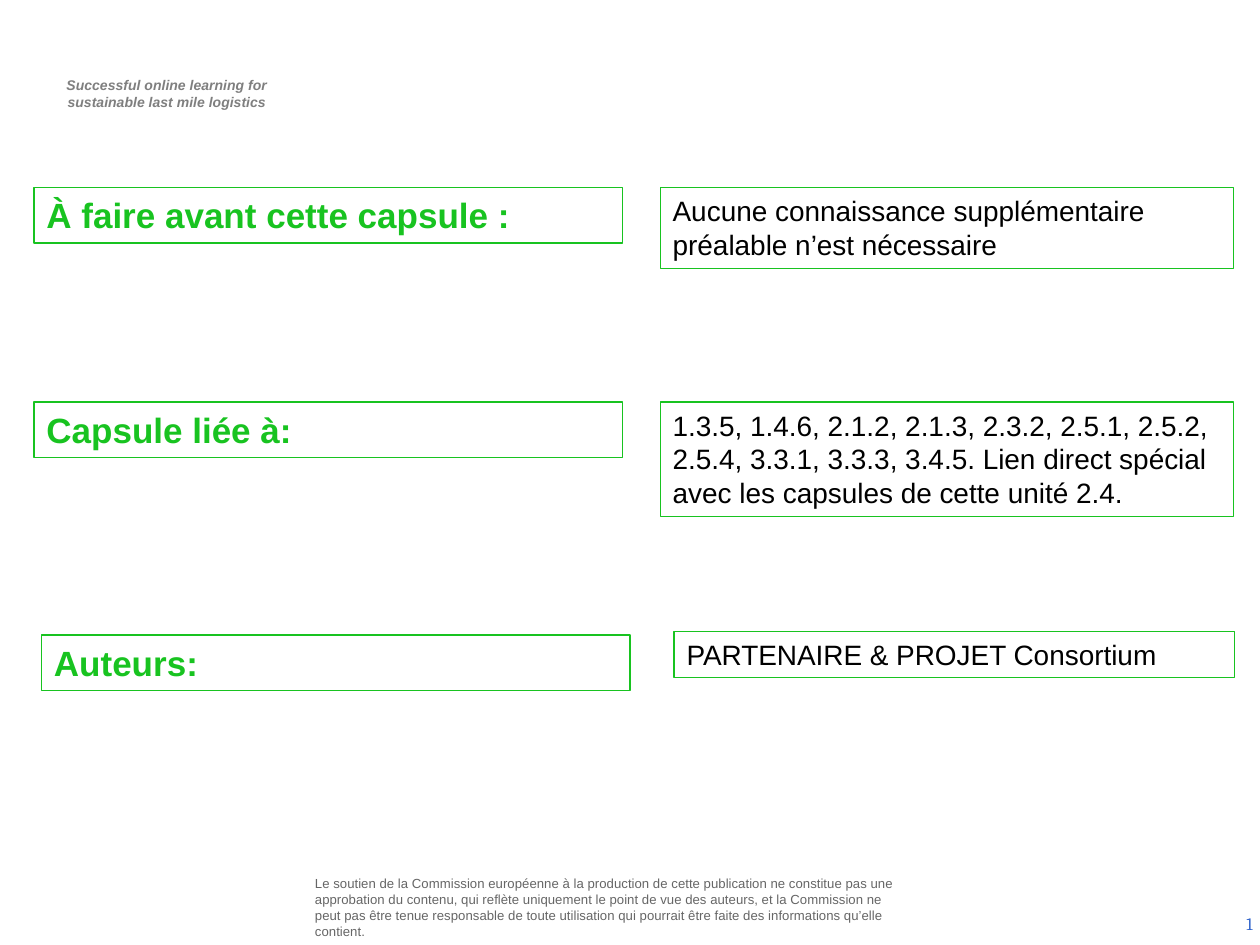
from pptx import Presentation
from pptx.dml.color import RGBColor
from pptx.enum.shapes import MSO_SHAPE
from pptx.enum.text import MSO_ANCHOR, MSO_AUTO_SIZE, PP_ALIGN
from pptx.oxml.ns import qn
from pptx.util import Inches, Pt

GREEN = RGBColor(0x18, 0xC3, 0x20)
WHITE = RGBColor(0xFF, 0xFF, 0xFF)
BLACK = RGBColor(0x00, 0x00, 0x00)
HEADER_GRAY = RGBColor(0x7F, 0x7F, 0x7F)
FOOTER_GRAY = RGBColor(0x66, 0x66, 0x66)
BLUE = RGBColor(0x33, 0x66, 0xCC)


def write(shape, text, size, color, font="Arial", bold=False, italic=False,
          align=PP_ALIGN.LEFT, anchor=MSO_ANCHOR.TOP, insets=(0.1, 0.05)):
    frame = shape.text_frame
    frame.word_wrap = True
    frame.vertical_anchor = anchor
    frame.margin_left = frame.margin_right = Inches(insets[0])
    frame.margin_top = frame.margin_bottom = Inches(insets[1])
    frame.text = text
    for paragraph in frame.paragraphs:
        paragraph.alignment = align
        for run in paragraph.runs:
            run.font.name = font
            run.font.size = Pt(size)
            run.font.bold = bold
            run.font.italic = italic
            run.font.color.rgb = color


def add_box(left, top, width, height, text, size, color, bold):
    box = slide.shapes.add_shape(MSO_SHAPE.RECTANGLE, Inches(left), Inches(top),
                                 Inches(width), Inches(height))
    box.shadow.inherit = False
    box.fill.solid()
    box.fill.fore_color.rgb = WHITE
    box.line.color.rgb = GREEN
    box.line.width = Pt(0.75)
    write(box, text, size, color, bold=bold)
    box.text_frame.auto_size = MSO_AUTO_SIZE.SHAPE_TO_FIT_TEXT


presentation = Presentation()
presentation.slide_width = Inches(10)
presentation.slide_height = Inches(7.5)
slide = presentation.slides.add_slide(presentation.slide_layouts[6])

header = slide.shapes.add_textbox(Inches(0.29), Inches(0.56), Inches(2.03), Inches(0.37))
write(header, "Successful online learning for\nsustainable last mile logistics", 8,
      HEADER_GRAY, bold=True, italic=True, align=PP_ALIGN.CENTER)
for paragraph in header.text_frame.paragraphs:
    paragraph._p.get_or_add_pPr().set("marL", str(Inches(0.04)))

disclaimer = slide.shapes.add_textbox(Inches(2.46), Inches(6.95), Inches(4.73), Inches(0.5))
write(disclaimer,
      "Le soutien de la Commission européenne à la production de cette publication ne "
      "constitue pas une approbation du contenu, qui reflète uniquement le point de vue "
      "des auteurs, et la Commission ne peut pas être tenue responsable de toute "
      "utilisation qui pourrait être faite des informations qu’elle contient.",
      7.5, FOOTER_GRAY, anchor=MSO_ANCHOR.MIDDLE, insets=(0.04, 0.04))

number = slide.shapes.add_textbox(Inches(7.71), Inches(7.13), Inches(2.33), Inches(0.4))
write(number, "2", 10, BLUE, font="Cambria", align=PP_ALIGN.RIGHT, anchor=MSO_ANCHOR.MIDDLE)
field = number.text_frame.paragraphs[0].runs[0]._r
field.tag = qn("a:fld")
field.set("id", "{B6F15528-21DE-4FAA-801E-634DDDAF4B2B}")
field.set("type", "slidenum")

headings = [
    (0.27, 1.49, "À faire avant cette capsule :"),
    (0.27, 3.19, "Capsule liée à:"),
    (0.33, 5.04, "Auteurs:"),
]
for left, top, text in headings:
    add_box(left, top, 4.67, 0.44, text, 20, GREEN, True)

details = [
    (5.24, 1.49, 4.55, 0.64, "Aucune connaissance supplémentaire préalable n’est nécessaire"),
    (5.24, 3.19, 4.55, 0.91,
     "1.3.5, 1.4.6, 2.1.2, 2.1.3, 2.3.2, 2.5.1, 2.5.2, 2.5.4, 3.3.1, 3.3.3, 3.4.5. "
     "Lien direct spécial avec les capsules de cette unité 2.4."),
    (5.35, 5.01, 4.45, 0.37, "PARTENAIRE & PROJET Consortium"),
]
for left, top, width, height, text in details:
    add_box(left, top, width, height, text, 16, BLACK, False)

presentation.save("out.pptx")
